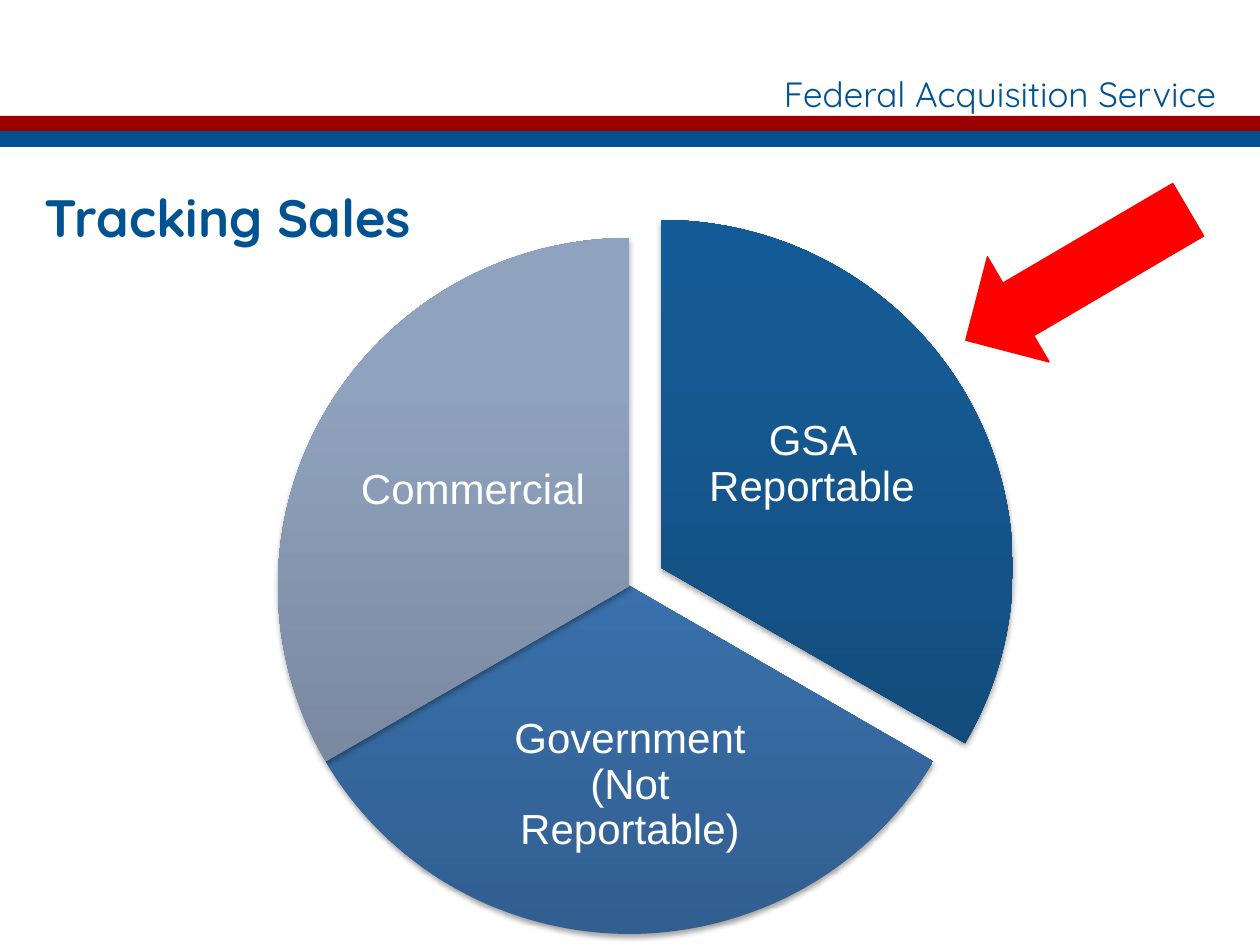
from dataclasses import dataclass

from lxml.etree import SubElement
from pptx import Presentation
from pptx.dml.color import RGBColor
from pptx.enum.shapes import MSO_SHAPE
from pptx.enum.text import MSO_ANCHOR, MSO_AUTO_SIZE, PP_ALIGN
from pptx.oxml.ns import qn
from pptx.util import Emu, Pt

EMU_PER_PX = 914400 / 126
ADJUSTMENT_PER_DEGREE = 0.6


def px(length):
    return Emu(round(length * EMU_PER_PX))


def set_values(target, values):
    for name, value in values.items():
        setattr(target, name, value)


def add_element(parent, tag, **attributes):
    return SubElement(parent, qn(tag), {name: str(value) for name, value in attributes.items()})


@dataclass(frozen=True)
class Theme:
    blue: str = "005390"
    maroon: str = "990000"
    red: str = "FF0000"
    white: str = "FFFFFF"
    reportable: tuple = ("114571", "165A93", "135B96")
    government: tuple = ("315F91", "3F7BBC", "3D7BBF")
    commercial: tuple = ("6F7D92", "90A3BE", "90A3BF")
    heading_font: str = "Quicksand"
    label_font: str = "Arial"
    header_size: int = 20
    title_size: int = 30
    label_size: int = 24


class SlideBuilder:
    def __init__(self, slide, theme):
        self.slide = slide
        self.theme = theme

    def set_text(self, shape, text, font, size, color, alignment, frame_format, bold=False, line_spacing=1.0):
        set_values(shape.text_frame, frame_format)
        paragraph = shape.text_frame.paragraphs[0]
        run = paragraph.add_run()
        run.text = text
        set_values(paragraph, {"alignment": alignment, "line_spacing": line_spacing})
        set_values(run.font, {"name": font, "size": Pt(size), "bold": bold})
        run.font.color.rgb = RGBColor.from_string(color)

    def title(self, text, box):
        shape = self.slide.shapes.title
        set_values(shape, dict(zip(("left", "top", "width", "height"), map(px, box))))
        self.set_text(shape, text, self.theme.heading_font, self.theme.title_size, self.theme.blue, PP_ALIGN.LEFT,
                      {"vertical_anchor": MSO_ANCHOR.TOP, "auto_size": MSO_AUTO_SIZE.NONE}, bold=True)

    def header(self, text, box):
        shape = self.slide.shapes.add_textbox(*map(px, box))
        self.set_text(shape, text, self.theme.heading_font, self.theme.header_size, self.theme.blue, PP_ALIGN.RIGHT,
                      {"vertical_anchor": MSO_ANCHOR.MIDDLE, "word_wrap": False})

    def label(self, text, box):
        shape = self.slide.shapes.add_textbox(*map(px, box))
        margins = {f"margin_{side}": px(4) for side in ("left", "top", "right", "bottom")}
        self.set_text(shape, text, self.theme.label_font, self.theme.label_size, self.theme.white, PP_ALIGN.CENTER,
                      {"vertical_anchor": MSO_ANCHOR.MIDDLE, "word_wrap": True, **margins}, line_spacing=0.9)

    def shape(self, kind, box):
        shape = self.slide.shapes.add_shape(kind, *map(px, box))
        shape.shadow.inherit = False
        shape.line.fill.background()
        return shape

    def filled(self, kind, box, color, rotation=0):
        shape = self.shape(kind, box)
        shape.fill.solid()
        shape.fill.fore_color.rgb = RGBColor.from_string(color)
        shape.rotation = rotation
        return shape

    def pie_slice(self, box, start, end, colors):
        shape = self.shape(MSO_SHAPE.PIE, box)
        for index, angle in enumerate((start, end)):
            shape.adjustments[index] = angle * ADJUSTMENT_PER_DEGREE
        self.gradient(shape, colors)
        self.shadow(shape)

    def gradient(self, shape, colors):
        shape.fill.gradient()
        gradient = shape.element.spPr.find(qn("a:gradFill"))
        for child in list(gradient):
            gradient.remove(child)
        stops = add_element(gradient, "a:gsLst")
        for position, color in zip((0, 80000, 100000), colors):
            add_element(add_element(stops, "a:gs", pos=position), "a:srgbClr", val=color)
        add_element(gradient, "a:lin", ang=270 * 60000, scaled=0)

    def shadow(self, shape):
        effects = shape.element.spPr.find(qn("a:effectLst"))
        shadow = add_element(effects, "a:outerShdw", blurRad=Pt(3.1), dist=Pt(1.8), dir=90 * 60000, rotWithShape=0)
        add_element(add_element(shadow, "a:srgbClr", val="000000"), "a:alpha", val=35000)

    def arrow(self, box, rotation, color):
        shape = self.filled(MSO_SHAPE.RIGHT_ARROW, box, color, rotation)
        shape.line.color.rgb = RGBColor.from_string(color)
        shape.line.width = Pt(0.75)


def main():
    presentation = Presentation()
    set_values(presentation, {"slide_width": px(1260), "slide_height": px(945)})
    theme = Theme()
    builder = SlideBuilder(presentation.slides.add_slide(presentation.slide_layouts[5]), theme)

    builder.header("Federal Acquisition Service", (693, 69, 536, 48))
    for top, color in ((116, theme.maroon), (131, theme.blue)):
        builder.filled(MSO_SHAPE.RECTANGLE, (0, top, 1260, 16), color)
    builder.title("Tracking Sales", (32, 179, 1071, 97))

    pie_box = (278, 238, 703, 696)
    exploded_box = (310, 220, 703, 696)
    sales = (
        ("GSA Reportable", exploded_box, theme.reportable, (693, 349, 238, 232)),
        ("Government (Not Reportable)", pie_box, theme.government, (471, 678, 318, 215)),
        ("Commercial", pie_box, theme.commercial, (354, 375, 238, 232)),
    )
    sweep = 360 // len(sales)
    for index, (name, box, colors, label_box) in enumerate(sales):
        start = (270 + index * sweep) % 360
        builder.pie_slice(box, start, (start + sweep) % 360, colors)
        builder.label(name, label_box)

    builder.arrow((948, 214, 258, 122), 149.6, theme.red)
    presentation.save("out.pptx")


if __name__ == "__main__":
    main()
